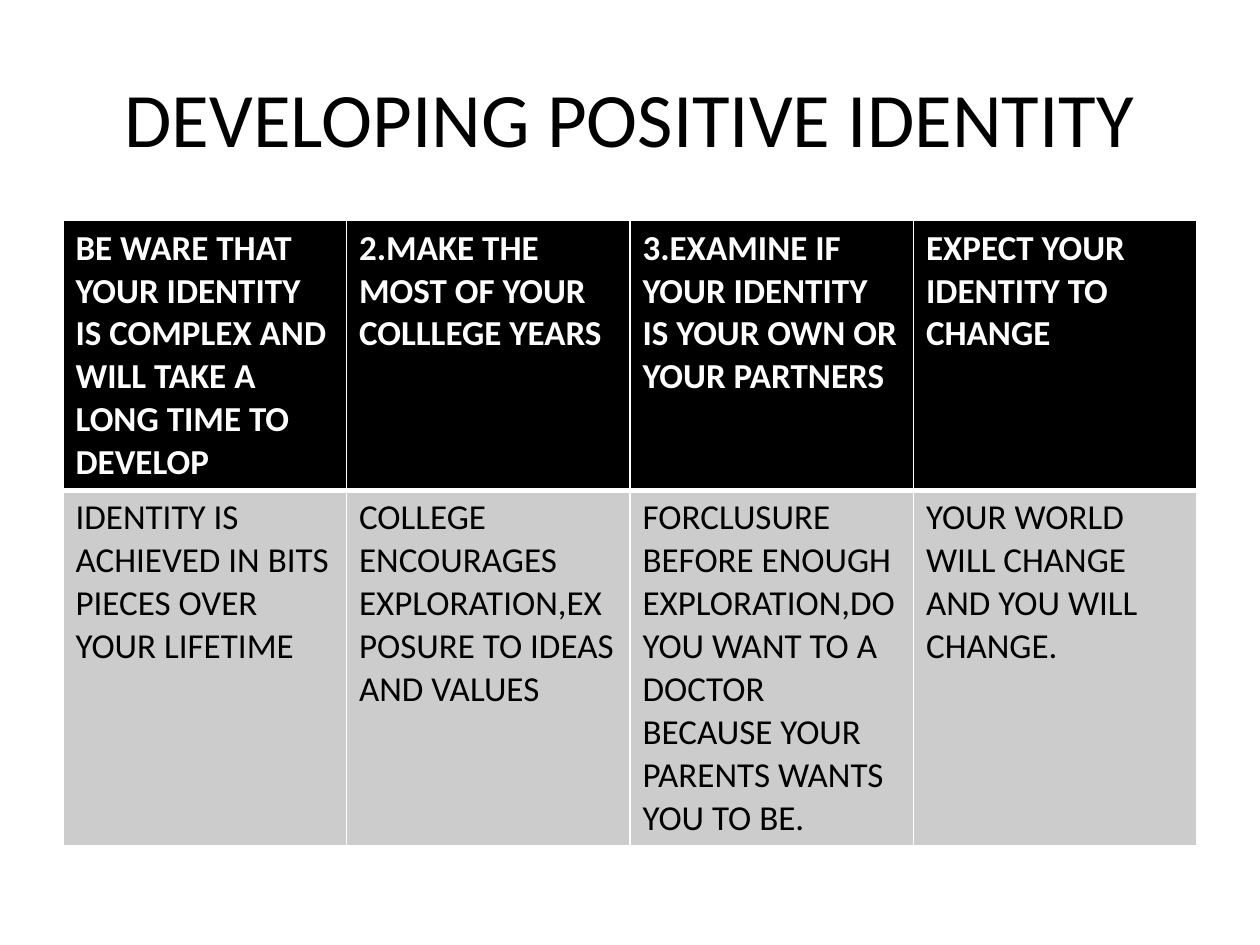
from dataclasses import dataclass

from lxml.etree import SubElement
from pptx import Presentation
from pptx.dml.color import RGBColor
from pptx.enum.text import MSO_ANCHOR, PP_ALIGN
from pptx.oxml.ns import qn
from pptx.util import Inches, Pt

COLORS = {"black": "000000", "white": "FFFFFF", "gray": "CCCCCC"}
FONT = "Calibri"
LEFT, WIDTH = 0.5, 9


@dataclass
class RowStyle:
    height: float
    fill: str
    text: str
    bold: bool
    top_border: float
    bottom_border: float


@dataclass
class Advice:
    heading: str
    detail: str


HEADER = RowStyle(2.13, "black", "white", True, 1, 3)
BODY = RowStyle(2.8, "gray", "black", False, 3, 1)

ADVICE = [
    Advice("BE WARE THAT YOUR IDENTITY IS COMPLEX AND WILL TAKE A LONG TIME TO DEVELOP",
           "IDENTITY IS ACHIEVED IN BITS PIECES OVER YOUR LIFETIME"),
    Advice("2.MAKE THE MOST OF YOUR COLLLEGE YEARS",
           "COLLEGE ENCOURAGES EXPLORATION,EXPOSURE TO IDEAS AND VALUES"),
    Advice("3.EXAMINE IF YOUR IDENTITY IS YOUR OWN OR YOUR PARTNERS",
           "FORCLUSURE BEFORE ENOUGH EXPLORATION,DO YOU WANT TO A DOCTOR "
           "BECAUSE YOUR PARENTS WANTS YOU TO BE."),
    Advice("EXPECT YOUR IDENTITY TO CHANGE",
           "YOUR WORLD WILL CHANGE AND YOU WILL CHANGE."),
]


def set_font(paragraph, size: float, color: str, bold: bool = False) -> None:
    font = paragraph.font
    font.name, font.size, font.bold = FONT, Pt(size), bold
    font.color.rgb = RGBColor.from_string(COLORS[color])


def add_title(slide, text: str) -> None:
    title = slide.shapes.title
    title.left, title.top = Inches(LEFT), Inches(0.3)
    title.width, title.height = Inches(WIDTH), Inches(1.25)
    title.text_frame.text = text
    title.text_frame.vertical_anchor = MSO_ANCHOR.MIDDLE
    paragraph = title.text_frame.paragraphs[0]
    paragraph.alignment = PP_ALIGN.CENTER
    set_font(paragraph, 44, "black")


def set_borders(cell, style: RowStyle) -> None:
    properties = cell._tc.get_or_add_tcPr()
    widths = {"lnL": 1, "lnR": 1, "lnT": style.top_border, "lnB": style.bottom_border}
    for tag, width in widths.items():
        line = SubElement(properties, qn(f"a:{tag}"), w=str(Pt(width)))
        fill = SubElement(line, qn("a:solidFill"))
        SubElement(fill, qn("a:srgbClr"), val=COLORS["white"])


def fill_cell(cell, text: str, style: RowStyle) -> None:
    set_borders(cell, style)
    cell.fill.solid()
    cell.fill.fore_color.rgb = RGBColor.from_string(COLORS[style.fill])
    cell.text = text
    set_font(cell.text_frame.paragraphs[0], 20, style.text, style.bold)


def add_advice_table(slide, advice: list[Advice]) -> None:
    styles = [HEADER, BODY]
    height = sum(style.height for style in styles)
    table = slide.shapes.add_table(len(styles), len(advice), Inches(LEFT), Inches(1.75),
                                   Inches(WIDTH), Inches(height)).table
    for row, style in zip(table.rows, styles):
        row.height = Inches(style.height)
    for column, item in enumerate(advice):
        fill_cell(table.cell(0, column), item.heading, HEADER)
        fill_cell(table.cell(1, column), item.detail, BODY)


def main() -> None:
    presentation = Presentation()
    presentation.slide_width, presentation.slide_height = Inches(10), Inches(7.5)
    slide = presentation.slides.add_slide(presentation.slide_layouts[5])
    add_title(slide, "DEVELOPING POSITIVE IDENTITY")
    add_advice_table(slide, ADVICE)
    presentation.save("out.pptx")


if __name__ == "__main__":
    main()
